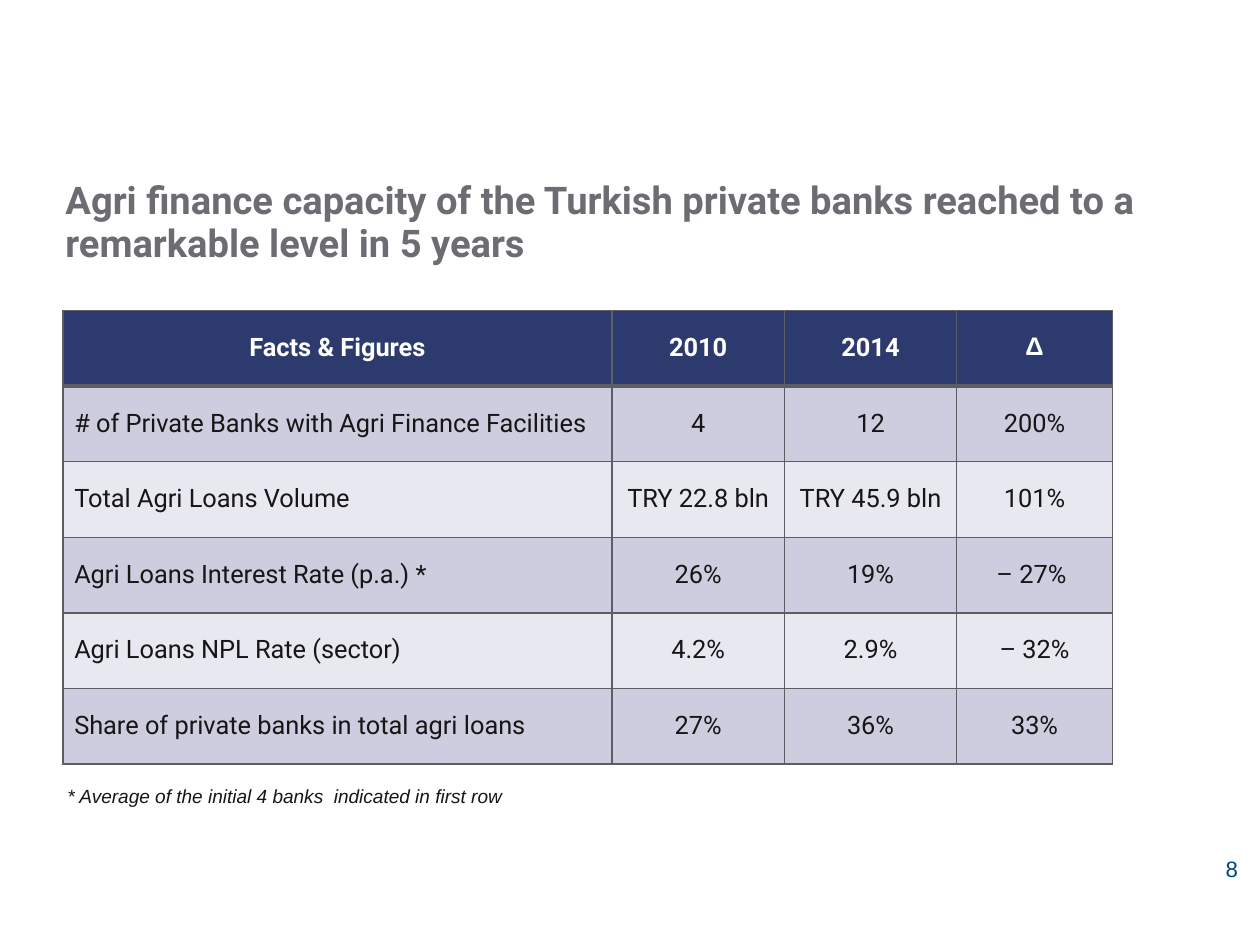
from lxml.etree import SubElement
from pptx import Presentation
from pptx.dml.color import RGBColor
from pptx.enum.text import MSO_ANCHOR as Anchor, MSO_AUTO_SIZE as AutoSize, PP_ALIGN as Align
from pptx.oxml.ns import qn
from pptx.util import Cm, Pt

COLORS = {"heading": "6C6C73", "page": "004586", "ink": "161616", "white": "FFFFFF",
          "header": "2C3A6D", "odd": "CDCDDF", "even": "E8E8F0", "border": "5D5E63"}

FACTS = [
    ("Facts & Figures", "2010", "2014", "Δ"),
    ("# of Private Banks with Agri Finance Facilities", "4", "12", "200%"),
    ("Total Agri Loans Volume", "TRY 22.8 bln", "TRY 45.9 bln", "101%"),
    ("Agri Loans Interest Rate (p.a.) *", "26%", "19%", "– 27% "),
    ("Agri Loans NPL Rate (sector)", "4.2%", "2.9%", "– 32%"),
    ("Share of private banks in total agri loans", "27%", "36%", "33%"),
]
COLUMN_WIDTHS = (12.2, 3.83, 3.83, 3.46)
ROW_HEIGHT = 1.68


def write(frame, text, size, color, font="Arial", bold=False, italic=False,
          align=Align.LEFT, spacing=None):
    paragraph = frame.paragraphs[0]
    paragraph.alignment = align
    paragraph.line_spacing = spacing
    run = paragraph.add_run()
    run.text = text
    run.font.name, run.font.size = font, Pt(size)
    run.font.bold, run.font.italic = bold, italic
    run.font.color.rgb = RGBColor.from_string(COLORS[color])


def set_borders(cell, top, bottom):
    properties = cell._tc.get_or_add_tcPr()
    for position, (side, width) in enumerate(
            (("L", 1), ("R", 1), ("T", top), ("B", bottom))):
        line = SubElement(properties, qn(f"a:ln{side}"), w=str(Pt(width)))
        fill = SubElement(line, qn("a:solidFill"))
        SubElement(fill, qn("a:srgbClr"), val=COLORS["border"])
        properties.insert(position, line)


def add_heading(slide, left, top, width, height):
    heading = slide.shapes.title
    heading.left, heading.top, heading.width, heading.height = map(Cm, (left, top, width, height))
    frame = heading.text_frame
    frame.word_wrap, frame.auto_size = True, AutoSize.NONE
    frame.vertical_anchor = Anchor.TOP
    write(frame, "Agri finance capacity of the Turkish private banks reached to a "
                 "remarkable level in 5 years",
          24, "heading", font="Roboto", bold=True, spacing=0.93)


def add_facts_table(slide, left, top):
    facts = slide.shapes.add_table(
        len(FACTS), len(COLUMN_WIDTHS), Cm(left), Cm(top),
        Cm(sum(COLUMN_WIDTHS)), Cm(ROW_HEIGHT * len(FACTS))).table
    for column, width in zip(facts.columns, COLUMN_WIDTHS):
        column.width = Cm(width)
    for r, values in enumerate(FACTS):
        facts.rows[r].height = Cm(ROW_HEIGHT)
        is_header = r == 0
        band = "header" if is_header else "odd" if r % 2 else "even"
        for c, value in enumerate(values):
            cell = facts.cell(r, c)
            cell.margin_left = cell.margin_right = Cm(0.25)
            cell.margin_top = cell.margin_bottom = Cm(0.5)
            cell.fill.solid()
            cell.fill.fore_color.rgb = RGBColor.from_string(COLORS[band])
            # The rule under the header is heavier
            set_borders(cell, top=3 if r == 1 else 1, bottom=3 if is_header else 1)
            write(cell.text_frame, value, 16, "white" if is_header else "ink",
                  font="Arial" if value == "Δ" else "Roboto", bold=is_header,
                  align=Align.CENTER if is_header or c else Align.LEFT)


def add_note(slide, text, left, top, width, height, margins=(0.25, 0.13), **text_format):
    frame = slide.shapes.add_textbox(*map(Cm, (left, top, width, height))).text_frame
    frame.word_wrap = True
    frame.margin_left = frame.margin_right = Cm(margins[0])
    frame.margin_top = frame.margin_bottom = Cm(margins[1])
    write(frame, text, **text_format)


def main():
    deck = Presentation()
    deck.slide_width, deck.slide_height = Cm(28), Cm(21)
    slide = deck.slides.add_slide(deck.slide_layouts[5])

    add_heading(slide, 1.2, 3.89, 26.8, 1.8)
    # Page number
    add_note(slide, "8", 20.98, 19.05, 6.53, 1.45, margins=(0, 0),
             size=14, color="page", align=Align.RIGHT, spacing=0.93)
    add_facts_table(slide, 1.4, 6.9)
    # Footnote
    add_note(slide, "* Average of the initial 4 banks  indicated in first row",
             1.25, 17.3, 14.8, 0.77, size=12, color="ink", italic=True)

    deck.save("out.pptx")


if __name__ == "__main__":
    main()
